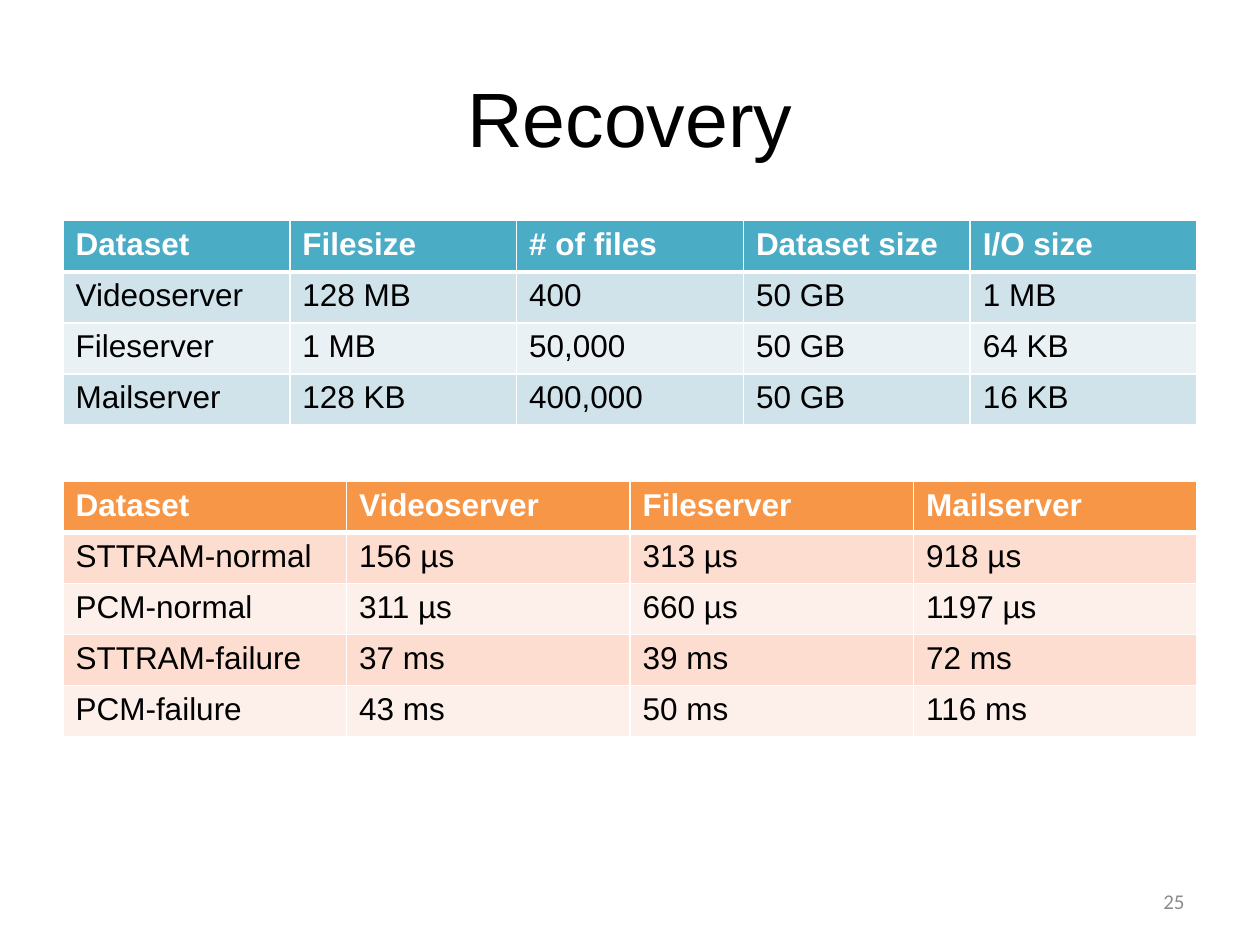
from lxml.etree import SubElement as Sub
from pptx import Presentation as Deck
from pptx.dml.color import RGBColor as Rgb
from pptx.enum.text import MSO_ANCHOR as Anchor, PP_ALIGN as Align
from pptx.oxml.ns import qn
from pptx.util import Cm, Pt

LEFT, WIDE, ROW = 1.27, 22.86, 1.03
SIZES = [
    ["Dataset", "Filesize", "# of files", "Dataset size", "I/O size"],
    ["Videoserver", "128 MB", "400", "50 GB", "1 MB"],
    ["Fileserver", "1 MB", "50,000", "50 GB", "64 KB"],
    ["Mailserver", "128 KB", "400,000", "50 GB", "16 KB"],
]
TIMES = [
    ["Dataset", "Videoserver", "Fileserver", "Mailserver"],
    ["STTRAM-normal", "156 µs", "313 µs", "918 µs"],
    ["PCM-normal", "311 µs", "660 µs", "1197 µs"],
    ["STTRAM-failure", "37 ms", "39 ms", "72 ms"],
    ["PCM-failure", "43 ms", "50 ms", "116 ms"],
]


def color(hue):
    """Turn a hex string into a colour."""
    return Rgb.from_string(hue)


def place(shape, box):
    """Move a shape to a box given in centimetres."""
    shape.left, shape.top, shape.width, shape.height = map(Cm, box)


def write(frame, text, size, hue, face="Arial", align=Align.LEFT, bold=False):
    """Add one formatted run to a text frame."""
    para = frame.paragraphs[0]
    para.alignment = align
    run = para.add_run()
    run.text = text
    font = run.font
    font.size, font.name, font.bold = Pt(size), face, bold
    font.color.rgb = color(hue)


def edge(cell, head):
    """Draw white cell borders, thick where the header meets the body."""
    props = cell._tc.get_or_add_tcPr()
    for side in "LRTB":
        width = Pt(3 if head and side == "B" else 1)
        line = Sub(props, qn(f"a:ln{side}"), w=str(width))
        Sub(Sub(line, qn("a:solidFill")), qn("a:srgbClr"), val="FFFFFF")


def title(slide, box, text):
    """Fill the title placeholder."""
    shape = slide.shapes.title
    place(shape, box)
    shape.text_frame.vertical_anchor = Anchor.MIDDLE
    write(shape.text_frame, text, 44, "000000", align=Align.CENTER)


def grid(slide, box, rows, top, bands):
    """Build a banded table with equal columns and rows."""
    count = len(rows[0])
    table = slide.shapes.add_table(len(rows), count, *map(Cm, box)).table
    for col in table.columns:
        col.width = Cm(box[2] / count)
    for i, texts in enumerate(rows):
        table.rows[i].height = Cm(box[3] / len(rows))
        head = i == 0
        for j, text in enumerate(texts):
            cell = table.cell(i, j)
            edge(cell, i == 0)
            cell.fill.solid()
            cell.fill.fore_color.rgb = color(top if head else bands[(i - 1) % 2])
            write(cell.text_frame, text, 18, "FFFFFF" if head else "000000", bold=head)


def number(slide, box, text):
    """Place the page number."""
    frame = slide.shapes.add_textbox(*map(Cm, box)).text_frame
    frame.word_wrap = True
    frame.vertical_anchor = Anchor.MIDDLE
    write(frame, text, 12, "8C8C8C", "Calibri", Align.RIGHT)


def main():
    """Build the slide and save it."""
    deck = Deck()
    deck.slide_width, deck.slide_height = Cm(25.4), Cm(19.05)
    slide = deck.slides.add_slide(deck.slide_layouts[5])
    title(slide, (LEFT, 0.76, WIDE, 3.18), "Recovery")
    grid(slide, (LEFT, 4.45, WIDE, ROW * len(SIZES)), SIZES, "4BACC6", ("D0E3EA", "E9F1F5"))
    grid(slide, (LEFT, 9.7, WIDE, ROW * len(TIMES)), TIMES, "F79646", ("FCDDCF", "FDEFE9"))
    number(slide, (18.2, 17.65, 5.93, 1.02), "25")
    deck.save("out.pptx")


if __name__ == "__main__":
    main()
